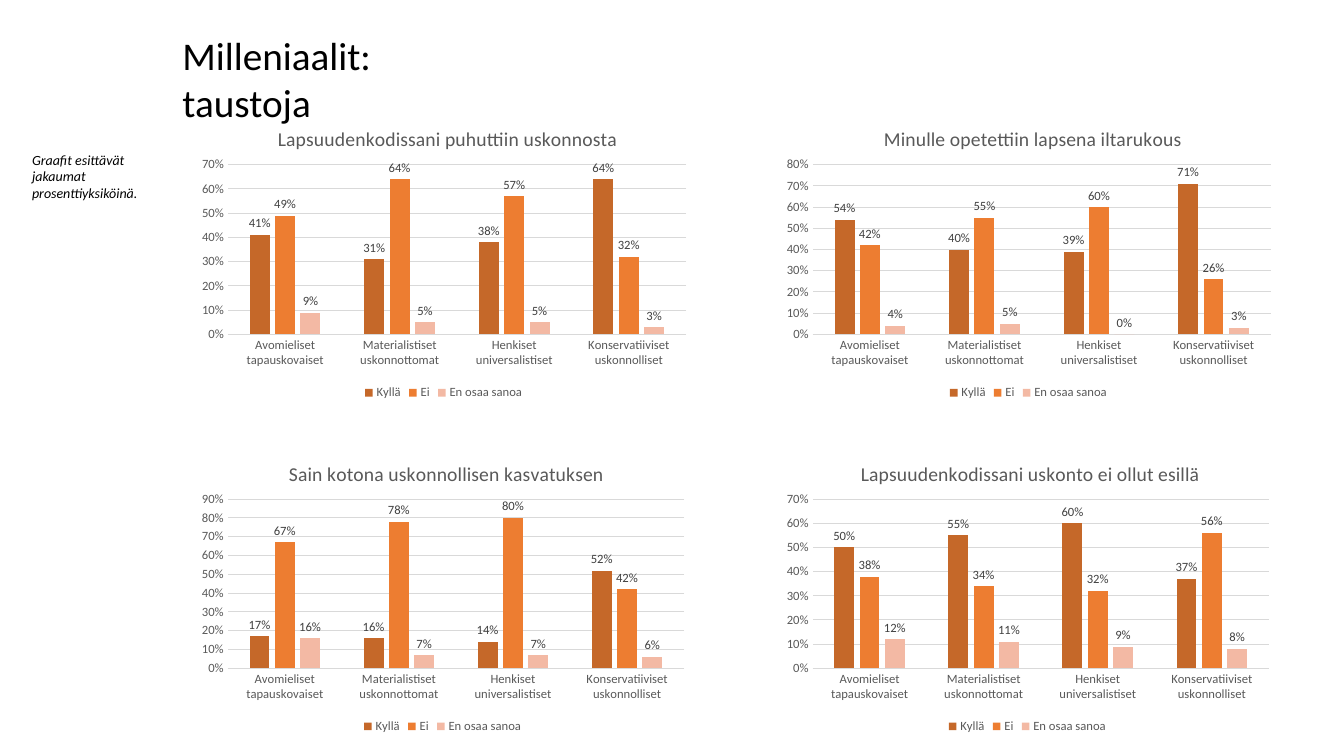
"""Build the slide on the religious backgrounds of millennials, with four clustered column charts."""
from dataclasses import dataclass

import pptx
import pptx.chart.data
import pptx.dml.color
import pptx.enum.chart
import pptx.enum.text
import pptx.oxml
import pptx.oxml.ns
import pptx.util

PX = 9144
FONT = "Calibri"
GREY, GRID = "595959", "D9D9D9"
CATEGORIES = [
    "Avomieliset tapauskovaiset",
    "Materialistiset uskonnottomat",
    "Henkiset universalistiset",
    "Konservatiiviset uskonnolliset",
]
SERIES = [("Kyllä", "C56829"), ("Ei", "ED7D31"), ("En osaa sanoa", "F3B9A4")]
LEFT, RIGHT, UPPER, LOWER = 190, 770, 103, 435


@dataclass(frozen=True)
class Question:
    """A survey question: chart place, title offset, axis top and percentages per answer."""
    title: str
    x: int
    y: int
    w: int
    h: int
    title_x: int
    top: float
    answers: tuple


QUESTIONS = [
    Question("Lapsuudenkodissani uskonto ei ollut esillä", RIGHT, LOWER, 498, 297, 80, 0.7,
             ((50, 55, 60, 37), (38, 34, 32, 56), (12, 11, 9, 8))),
    Question("Sain kotona uskonnollisen kasvatuksen", LEFT, LOWER, 498, 297, 93, 0.9,
             ((17, 16, 14, 52), (67, 78, 80, 42), (16, 7, 7, 6))),
    Question("Minulle opetettiin lapsena iltarukous", RIGHT, UPPER, 500, 298, 103, 0.8,
             ((54, 40, 39, 71), (42, 55, 60, 26), (4, 5, 0, 3))),
    Question("Lapsuudenkodissani puhuttiin uskonnosta", LEFT, UPPER, 500, 298, 82, 0.7,
             ((41, 31, 38, 64), (49, 64, 57, 32), (9, 5, 5, 3))),
]


def px(n: int) -> pptx.util.Emu:
    """Turn px into EMU."""
    return pptx.util.Emu(n * PX)


def rgb(color: str) -> pptx.dml.color.RGBColor:
    """Turn a hex string into a colour."""
    return pptx.dml.color.RGBColor.from_string(color)


def set_font(font, size: int, color: str, bold: bool = False, italic: bool = False) -> None:
    """Format a font."""
    font.name, font.size = FONT, pptx.util.Pt(size)
    font.bold, font.italic = bold, italic
    font.color.rgb = rgb(color)


def write(tf, text: str, size: int, color: str = "000000", italic: bool = False, align=None) -> None:
    """Write one formatted paragraph into a text frame."""
    p = tf.paragraphs[0]
    p.alignment = align
    r = p.add_run()
    r.text = text
    set_font(r.font, size, color, italic=italic)


def set_layout(parent, inner: bool = False, **fractions: float) -> None:
    """Place a chart part by fractions of the chart's size."""
    ns = pptx.oxml.ns
    layout = parent.find(ns.qn("c:layout"))
    if layout is None:
        layout = pptx.oxml.parse_xml(f"<c:layout {ns.nsdecls('c')}/>")
        parent.insert(0, layout)
    target = '<c:layoutTarget val="inner"/>' if inner else ""
    modes = "".join(f'<c:{k}Mode val="edge"/>' for k in "xy")
    values = "".join(f'<c:{k} val="{v:.3f}"/>' for k, v in fractions.items())
    layout.append(pptx.oxml.parse_xml(
        f"<c:manualLayout {ns.nsdecls('c')}>{target}{modes}{values}</c:manualLayout>"))


def style_axes(chart, top: float) -> None:
    """Format both axes of a chart."""
    none = pptx.enum.chart.XL_TICK_MARK.NONE
    for axis in (chart.category_axis, chart.value_axis):
        axis.major_tick_mark = axis.minor_tick_mark = none
        set_font(axis.tick_labels.font, 9, GREY)
    value = chart.value_axis
    value.minimum_scale, value.maximum_scale, value.major_unit = 0, top, 0.1
    value.tick_labels.number_format = "0%"
    value.tick_labels.number_format_is_linked = False
    value.format.line.fill.background()
    for line in (chart.category_axis.format.line, value.major_gridlines.format.line):
        line.color.rgb = rgb(GRID)
        line.width = pptx.util.Pt(0.75)


def add_question(slide, q: Question) -> None:
    """Draw the chart of one question."""
    data = pptx.chart.data.CategoryChartData(number_format="0%")
    data.categories = CATEGORIES
    for (name, _), percents in zip(SERIES, q.answers):
        data.add_series(name, [n / 100 for n in percents])
    kind = pptx.enum.chart.XL_CHART_TYPE.COLUMN_CLUSTERED
    chart = slide.shapes.add_chart(kind, px(q.x), px(q.y), px(q.w), px(q.h), data).chart
    set_font(chart.font, 10, "000000")

    chart.has_title = True
    title = chart.chart_title
    title.include_in_layout = False
    write(title.text_frame, q.title, 14, GREY)
    set_layout(title._element, x=q.title_x / q.w, y=0.06)

    chart.has_legend = True
    chart.legend.position = pptx.enum.chart.XL_LEGEND_POSITION.BOTTOM
    chart.legend.include_in_layout = False
    set_font(chart.legend.font, 9, GREY)

    style_axes(chart, q.top)
    set_layout(chart._chartSpace.chart.plotArea, inner=True, x=0.072, y=0.203, w=0.909, h=0.565)
    plot = chart.plots[0]
    plot.gap_width, plot.overlap, plot.vary_by_categories = 219, -27, False
    for series, (_, color) in zip(plot.series, SERIES):
        series.format.fill.solid()
        series.format.fill.fore_color.rgb = rgb(color)
        labels = series.data_labels
        labels.show_value = True
        labels.position = pptx.enum.chart.XL_LABEL_POSITION.OUTSIDE_END
        labels.number_format, labels.number_format_is_linked = "0%", False
        set_font(labels.font, 9, "404040")


def main() -> None:
    """Build and save the slide."""
    prs = pptx.Presentation()
    prs.slide_width, prs.slide_height = px(1333), px(750)
    slide = prs.slides.add_slide(prs.slide_layouts[5])
    for q in QUESTIONS:
        add_question(slide, q)

    sp = slide.shapes.title
    sp.left, sp.top, sp.width, sp.height = px(171), px(26), px(340), px(57)
    tf = sp.text_frame
    tf.word_wrap, tf.auto_size = True, pptx.enum.text.MSO_AUTO_SIZE.NONE
    tf.vertical_anchor = pptx.enum.text.MSO_ANCHOR.TOP
    tf.margin_right = px(40)
    write(tf, "Milleniaalit: taustoja", 28, align=pptx.enum.text.PP_ALIGN.LEFT)

    tf = slide.shapes.add_textbox(px(22), px(145), px(133), px(61)).text_frame
    tf.word_wrap = True
    write(tf, "Graafit esittävät jakaumat prosenttiyksiköinä.", 10, italic=True)
    prs.save("out.pptx")


if __name__ == "__main__":
    main()
